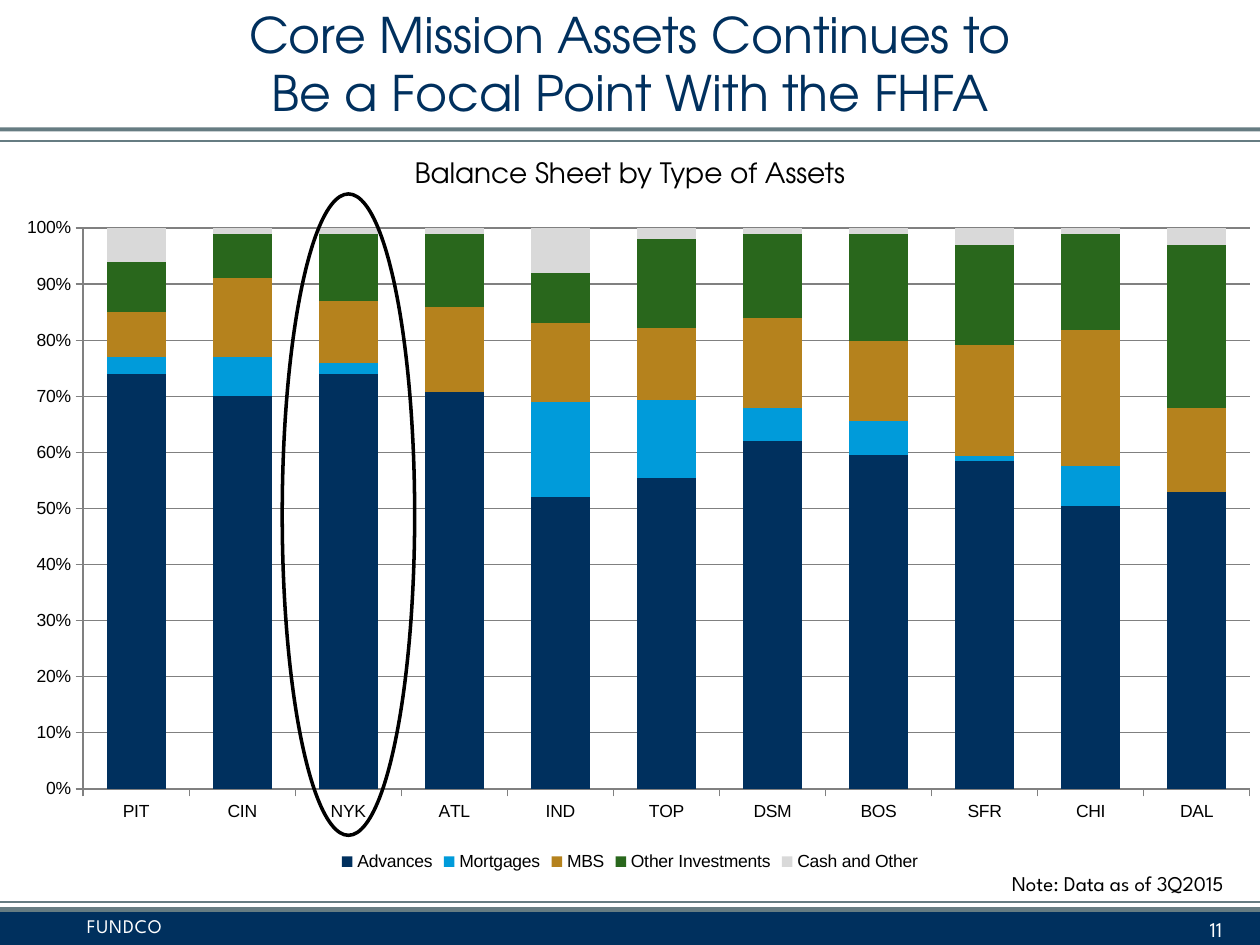
from dataclasses import dataclass

from lxml import etree
from pptx import Presentation
from pptx.chart.data import CategoryChartData
from pptx.dml.color import RGBColor
from pptx.enum.chart import XL_CHART_TYPE, XL_LEGEND_POSITION, XL_TICK_MARK
from pptx.enum.shapes import MSO_CONNECTOR, MSO_SHAPE
from pptx.enum.text import MSO_ANCHOR, PP_ALIGN
from pptx.oxml import parse_xml
from pptx.oxml.ns import nsdecls, qn
from pptx.util import Cm, Pt

COLORS = {
    "navy": "00305E", "slate": "667C82", "white": "FFFFFF", "black": "000000",
    "sky": "009BDA", "ochre": "B5821D", "green": "29671C", "silver": "D9D9D9",
    "grid": "808080",
}
HEADING_FONT, LABEL_FONT, CHART_FONT = "TeX Gyre Adventor", "League Spartan", "Arial"
SLIDE_WIDTH, SLIDE_HEIGHT = 25.4, 19.05


@dataclass
class Band:
    top: float
    height: float
    color: str


@dataclass
class Rule:
    y: float
    weight: float


@dataclass
class Label:
    text: str
    box: tuple[float, float, float, float]
    size: int
    font: str
    color: str
    align: PP_ALIGN
    anchor: MSO_ANCHOR = MSO_ANCHOR.MIDDLE
    margins: tuple[float, float, float, float] = (0.25, 0.13, 0.25, 0.13)
    spacing: float = 0


@dataclass
class AssetType:
    name: str
    color: str
    shares: tuple[int, ...]


BANDS = [
    Band(18.29, 0.1, "slate"),
    Band(18.39, 0.66, "navy"),
    Band(2.57, 0.08, "slate"),
]
RULES = [Rule(18.19, 1), Rule(2.84, 0.75)]

LABELS = [
    Label("FUNDCO", (0, 18.31, 18.62, 0.74), 11, LABEL_FONT, "white", PP_ALIGN.LEFT,
          MSO_ANCHOR.TOP, (1.75, 0.13, 0.25, 0.13), spacing=0.5),
    Label("Core Mission Assets Continues to\vBe a Focal Point With the FHFA",
          (0, 0, SLIDE_WIDTH, 2.54), 28, HEADING_FONT, "navy", PP_ALIGN.CENTER,
          margins=(0.13, 0.13, 0.13, 0.13)),
    Label("11", (18.97, 18.39, 5.92, 0.66), 12, LABEL_FONT, "white", PP_ALIGN.RIGHT,
          margins=(0.25, 0.15, 0.25, 0.13)),
    Label("Balance Sheet by Type of Assets", (0, 2.84, SLIDE_WIDTH, 1.27),
          16, HEADING_FONT, "black", PP_ALIGN.CENTER),
    Label("Note: Data as of 3Q2015", (16.87, 17.48, 8.05, 0.66),
          12, LABEL_FONT, "black", PP_ALIGN.RIGHT),
]

BANKS = ["PIT", "CIN", "NYK", "ATL", "IND", "TOP", "DSM", "BOS", "SFR", "CHI", "DAL"]
ASSET_TYPES = [
    AssetType("Advances", "navy", (74, 70, 74, 70, 52, 56, 62, 59, 59, 50, 53)),
    AssetType("Mortgages", "sky", (3, 7, 2, 0, 17, 14, 6, 6, 1, 7, 0)),
    AssetType("MBS", "ochre", (8, 14, 11, 15, 14, 13, 16, 14, 20, 24, 15)),
    AssetType("Other Investments", "green", (9, 8, 12, 13, 9, 16, 15, 19, 18, 17, 29)),
    AssetType("Cash and Other", "silver", (6, 1, 1, 1, 8, 2, 1, 1, 3, 1, 3)),
]
PLOT_LAYOUT = {"x": 0.066, "y": 0.036, "w": 0.926, "h": 0.834}


def rgb(name: str) -> RGBColor:
    return RGBColor.from_string(COLORS[name])


def set_font(font, size: int, name: str, color: str) -> None:
    for attribute, value in {"size": Pt(size), "name": name}.items():
        setattr(font, attribute, value)
    font.color.rgb = rgb(color)


def draw_band(shapes, band: Band) -> None:
    bar = shapes.add_shape(MSO_SHAPE.RECTANGLE, 0, Cm(band.top), Cm(SLIDE_WIDTH), Cm(band.height))
    bar.shadow.inherit = False
    bar.fill.solid()
    bar.fill.fore_color.rgb = rgb(band.color)
    bar.line.fill.background()


def draw_rule(shapes, rule: Rule) -> None:
    line = shapes.add_connector(MSO_CONNECTOR.STRAIGHT, 0, Cm(rule.y), Cm(SLIDE_WIDTH), Cm(rule.y))
    line.line.color.rgb = rgb("slate")
    line.line.width = Pt(rule.weight)
    etree.SubElement(line._element.spPr, qn("a:effectLst"))


def draw_label(shapes, label: Label) -> None:
    frame = shapes.add_textbox(*map(Cm, label.box)).text_frame
    left, top, right, bottom = map(Cm, label.margins)
    frame_format = {
        "word_wrap": True, "vertical_anchor": label.anchor, "margin_left": left,
        "margin_top": top, "margin_right": right, "margin_bottom": bottom,
    }
    for attribute, value in frame_format.items():
        setattr(frame, attribute, value)
    paragraph = frame.paragraphs[0]
    paragraph.text = label.text
    paragraph.alignment = label.align
    for run in paragraph.runs:
        set_font(run.font, label.size, label.font, label.color)
        if label.spacing:
            run._r.get_or_add_rPr().set("spc", str(round(label.spacing * 100)))


def draw_asset_chart(shapes) -> None:
    data = CategoryChartData(number_format="0")
    data.categories = BANKS
    for asset in ASSET_TYPES:
        data.add_series(asset.name, asset.shares)
    chart = shapes.add_chart(XL_CHART_TYPE.COLUMN_STACKED_100, Cm(0), Cm(4.11),
                             Cm(SLIDE_WIDTH), Cm(13.56), data).chart
    set_font(chart.font, 10, CHART_FONT, "black")
    chart.has_title = False
    chart.has_legend = True
    chart.legend.position = XL_LEGEND_POSITION.BOTTOM
    chart.legend.include_in_layout = False

    # Stacked columns
    plot = chart.plots[0]
    for attribute, value in {"gap_width": 80, "overlap": 100, "vary_by_categories": False}.items():
        setattr(plot, attribute, value)
    for series, asset in zip(plot.series, ASSET_TYPES):
        series.format.fill.solid()
        series.format.fill.fore_color.rgb = rgb(asset.color)

    # Axes and gridlines
    share_axis = chart.value_axis
    share_axis.minimum_scale, share_axis.maximum_scale, share_axis.major_unit = 0, 1, 0.1
    share_axis.tick_labels.number_format = "0%"
    share_axis.tick_labels.number_format_is_linked = False
    share_axis.has_major_gridlines = True
    for axis in (chart.category_axis, share_axis):
        axis.major_tick_mark = XL_TICK_MARK.OUTSIDE
    for part in (chart.category_axis, share_axis, share_axis.major_gridlines):
        part.format.line.color.rgb = rgb("grid")
        part.format.line.width = Pt(0.75)

    # Fixed inner plot area
    plot_area = chart._chartSpace.chart.plotArea
    for layout in plot_area.findall(qn("c:layout")):
        plot_area.remove(layout)
    sizes = "".join(f'<c:{key} val="{value}"/>' for key, value in PLOT_LAYOUT.items())
    plot_area.insert(0, parse_xml(
        f'<c:layout {nsdecls("c")}><c:manualLayout><c:layoutTarget val="inner"/>'
        f'<c:xMode val="edge"/><c:yMode val="edge"/>{sizes}</c:manualLayout></c:layout>'))


def draw_highlight(shapes) -> None:
    ring = shapes.add_shape(MSO_SHAPE.OVAL, Cm(5.69), Cm(3.91), Cm(2.67), Cm(12.93))
    ring.shadow.inherit = False
    ring.fill.background()
    ring.line.color.rgb = rgb("black")
    ring.line.width = Pt(2)


def main() -> None:
    deck = Presentation()
    deck.slide_width, deck.slide_height = Cm(SLIDE_WIDTH), Cm(SLIDE_HEIGHT)
    shapes = deck.slides.add_slide(deck.slide_layouts[6]).shapes

    # Header and footer bands
    for band in BANDS:
        draw_band(shapes, band)
    for rule in RULES:
        draw_rule(shapes, rule)

    # Chart with the NYK column ringed
    draw_asset_chart(shapes)
    draw_highlight(shapes)

    # Title, subtitle, note and footer text
    for label in LABELS:
        draw_label(shapes, label)
    deck.save("out.pptx")


if __name__ == "__main__":
    main()
